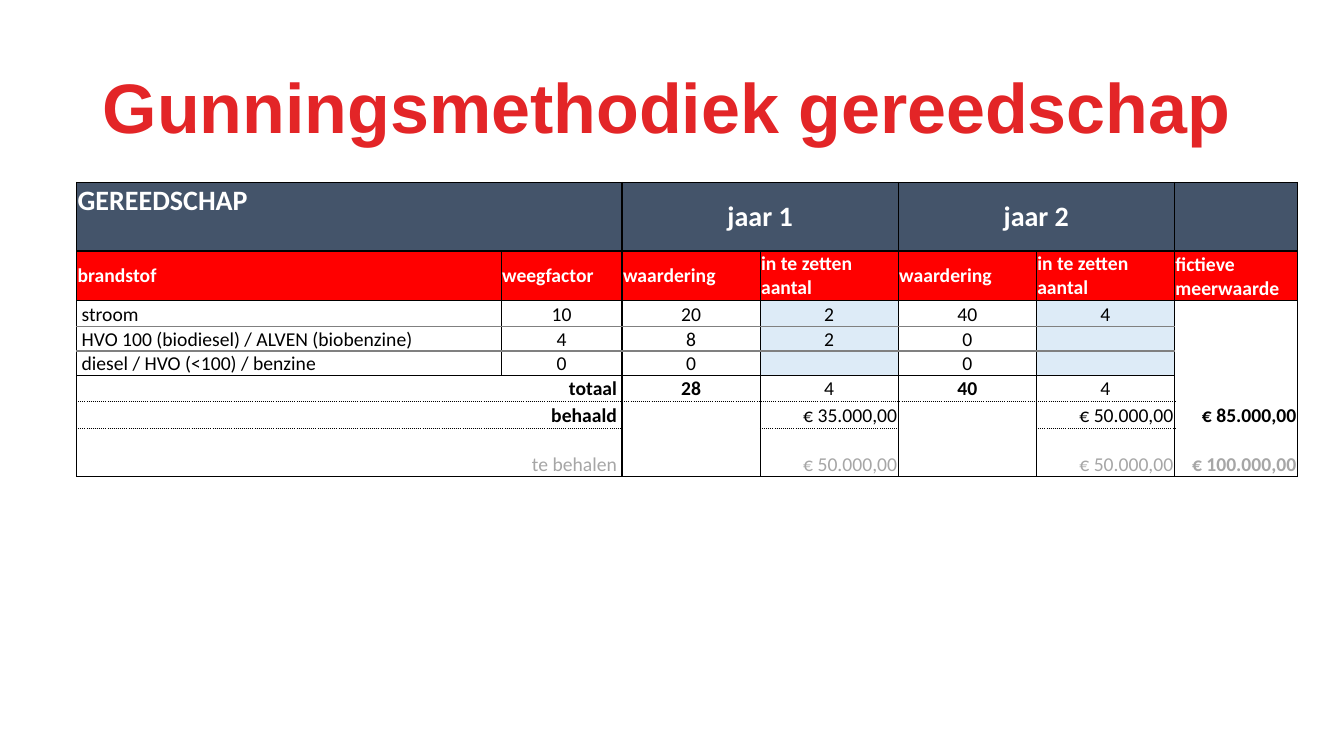
"""Build the slide with the scoring table for fuel-powered tools."""
from lxml import etree
from pptx import Presentation
from pptx import util as u
from pptx.dml.color import RGBColor
from pptx.enum import text
from pptx.oxml import ns

THEME = {
    "title": "E32527", "band": "44546A", "heading": "FF0000", "entry": "DDEBF7",
    "ink": "000000", "light": "FFFFFF", "muted": "A6A6A6", "rule": "808080",
    "title_font": "Arial", "table_font": "Calibri",
    "title_size": 50, "band_size": 20, "body_size": 14, "empty_size": 8,
}
LEFT, CENTER, RIGHT = text.PP_ALIGN.LEFT, text.PP_ALIGN.CENTER, text.PP_ALIGN.RIGHT
TOP, MIDDLE, BOTTOM = text.MSO_ANCHOR.TOP, text.MSO_ANCHOR.MIDDLE, text.MSO_ANCHOR.BOTTOM

COLUMNS = [1.5, 1.47, 1.24, 1.2] + [1.37] * 4 + [1.22]
ROWS = [0.68, 0.49, 0.26, 0.24, 0.24, 0.25, 0.27, 0.48]
SCORES = [
    ["GEREEDSCHAP", "", "", "", "jaar 1", "", "jaar 2", "", ""],
    ["brandstof", "", "", "weegfactor", "waardering", "in te zetten aantal",
     "waardering", "in te zetten aantal", "fictieve meerwaarde"],
    ["stroom", "", "", "10", "20", "2", "40", "4", ""],
    ["HVO 100 (biodiesel) / ALVEN (biobenzine)", "", "", "4", "8", "2", "0", "", ""],
    ["diesel / HVO (<100) / benzine", "", "", "0", "0", "", "0", "", ""],
    ["", "", "", "totaal", "28", "4", "40", "4", ""],
    ["", "", "", "behaald", "", "€ 35.000,00", "", "€ 50.000,00", "€ 85.000,00"],
    ["", "", "te behalen", "", "", "€ 50.000,00", "", "€ 50.000,00", "€ 100.000,00"],
]
SPANS = [(0, 0, 1), (0, 4, 5), (0, 6, 7), (3, 0, 2), (4, 0, 2), (7, 2, 3)]
BOLD_BODY = {(5, 3), (5, 4), (5, 6), (6, 3), (6, 8), (7, 8)}

VERTICALS = {edge: (1, range(8)) for edge in (0, 4, 6, 8, 9)}
VERTICALS |= {3: (0.5, range(1, 5)), 5: (0.5, range(1, 8)), 7: (0.5, range(1, 8))}
HORIZONTALS = {edge: ("ink", 1, "solid", range(9)) for edge in (0, 1, 2, 8)}
HORIZONTALS |= {edge: ("rule", 1, "solid", range(8)) for edge in (3, 4)}
HORIZONTALS |= {
    5: ("ink", 1, "solid", range(8)),
    6: ("ink", 0.5, "sysDot", range(8)),
    7: ("ink", 0.5, "sysDot", (0, 1, 2, 3, 5, 7)),
}


def write(paragraph, words, **look):
    """Add a run with the given font values."""
    run = paragraph.add_run()
    run.text = words
    run.font.color.rgb = RGBColor.from_string(THEME[look.pop("color")])
    for name, value in look.items():
        setattr(run.font, name, value)


def border(cell, side, color="ink", width=0, dash="solid"):
    """Draw one side of a cell, or clear it when the width is zero."""
    line = etree.SubElement(cell._tc.get_or_add_tcPr(), ns.qn(f"a:ln{side}"), w=str(int(u.Pt(width))))
    if not width:
        etree.SubElement(line, ns.qn("a:noFill"))
        return
    fill = etree.SubElement(line, ns.qn("a:solidFill"))
    etree.SubElement(fill, ns.qn("a:srgbClr"), val=THEME[color])
    etree.SubElement(line, ns.qn("a:prstDash"), val=dash)


deck = Presentation()
deck.slide_width, deck.slide_height = u.Inches(13.33), u.Inches(7.5)
slide = deck.slides.add_slide(deck.slide_layouts[6])

title = slide.shapes.add_textbox(*map(u.Inches, (0.92, 0.68, 12.4, 1.07))).text_frame
title.word_wrap = True
title.margin_top = u.Inches(0.05)
title.paragraphs[0].line_spacing = 0.9
write(title.paragraphs[0], "Gunningsmethodiek gereedschap", color="title", bold=True,
      name=THEME["title_font"], size=u.Pt(THEME["title_size"]))

scores = slide.shapes.add_table(
    len(ROWS), len(COLUMNS), *map(u.Inches, (0.76, 1.81, sum(COLUMNS), sum(ROWS)))).table
scores.first_row = scores.horz_banding = False
for column, width in zip(scores.columns, COLUMNS):
    column.width = u.Inches(width)
for row, height in zip(scores.rows, ROWS):
    row.height = u.Inches(height)
for r, first, last in SPANS:
    scores.cell(r, first).merge(scores.cell(r, last))

for r, entries in enumerate(SCORES):
    for c, words in enumerate(entries):
        cell = scores.cell(r, c)
        end = c + (cell.span_width if cell.is_merge_origin else 1)
        for side, edge in (("L", c), ("R", end)):
            width, reach = VERTICALS.get(edge, (0, ()))
            border(cell, side, width=width if r in reach and not cell.is_spanned else 0)
        for side, edge in (("T", r), ("B", r + 1)):
            color, width, dash, reach = HORIZONTALS[edge]
            border(cell, side, color, width if c in reach else 0, dash)

        shade = {0: "band", 1: "heading"}.get(r) or ("entry" if r < 5 and c in (5, 7) else None)
        if shade:
            cell.fill.solid()
            cell.fill.fore_color.rgb = RGBColor.from_string(THEME[shade])
        else:
            cell.fill.background()

        label_left, label_right = 2 <= r < 5 and c == 0, r >= 5 and c in (2, 3)
        layout = {
            "margin_left": u.Inches(0.05 if label_left else 0.01),
            "margin_right": u.Inches(0.05 if label_right else 0.01),
            "margin_top": u.Inches(0.01),
            "margin_bottom": 0,
            "vertical_anchor": TOP if (r, c) == (0, 0) else MIDDLE if r < 2 and (r, c) != (1, 8) else BOTTOM,
        }
        for name, value in layout.items():
            setattr(cell, name, value)

        paragraph = cell.text_frame.paragraphs[0]
        if not words:
            paragraph._p.get_or_add_endParaRPr().set("sz", str(THEME["empty_size"] * 100))
            continue
        if c == 0 or r == 1:
            paragraph.alignment = LEFT
        else:
            paragraph.alignment = RIGHT if r > 5 or label_right else CENTER
        write(paragraph, words, name=THEME["table_font"],
              color="light" if r < 2 else "muted" if r == 7 else "ink",
              size=u.Pt(THEME["body_size" if r else "band_size"]),
              bold=r < 2 or (r, c) in BOLD_BODY)

deck.save("out.pptx")
